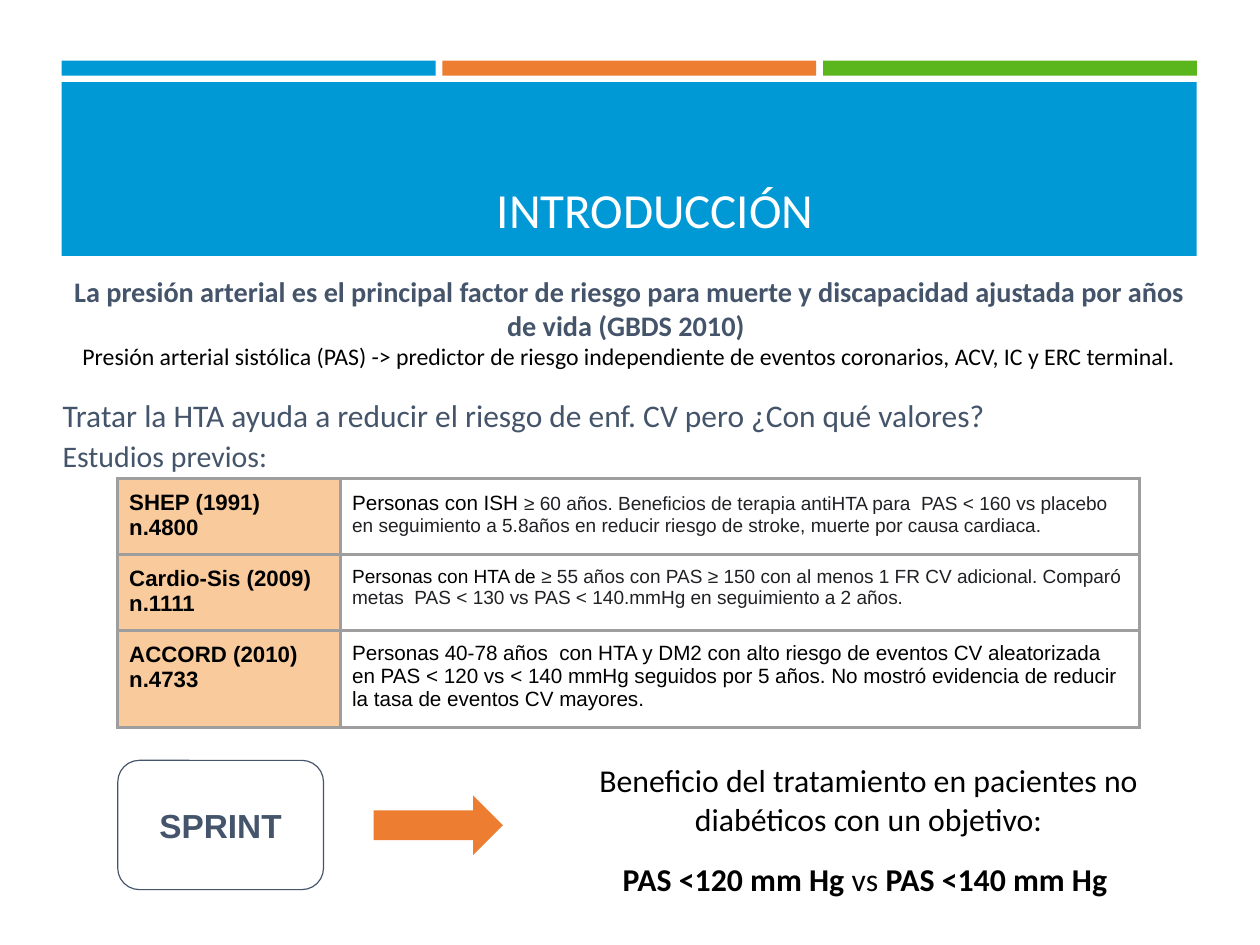
from lxml import etree
from pptx import Presentation
from pptx.dml.color import RGBColor
from pptx.enum.shapes import MSO_SHAPE
from pptx.enum.text import MSO_ANCHOR, MSO_AUTO_SIZE, PP_ALIGN
from pptx.oxml.ns import qn
from pptx.util import Pt

RECTANGLE = MSO_SHAPE.RECTANGLE
ROUNDED = MSO_SHAPE.ROUNDED_RECTANGLE
ARROW = MSO_SHAPE.RIGHT_ARROW
TOP, MIDDLE, BOTTOM = MSO_ANCHOR.TOP, MSO_ANCHOR.MIDDLE, MSO_ANCHOR.BOTTOM
LEFT, CENTER = PP_ALIGN.LEFT, PP_ALIGN.CENTER
NO_AUTOFIT = MSO_AUTO_SIZE.NONE

BLUE = RGBColor(0x00, 0x99, 0xD5)
ORANGE = RGBColor(0xED, 0x7D, 0x31)
GREEN = RGBColor(0x5B, 0xB5, 0x1C)
SLATE = RGBColor(0x44, 0x54, 0x6A)
PEACH = RGBColor(0xF9, 0xCB, 0x9C)
GRAY = RGBColor(0x9E, 0x9E, 0x9E)
INK = RGBColor(0x20, 0x21, 0x24)
BLACK = RGBColor(0, 0, 0)
WHITE = RGBColor(255, 255, 255)

TITLE = "INTRODUCCIÓN"
BODY = [
    ("La presión arterial es el principal factor de riesgo para muerte y discapacidad "
     "ajustada por años de vida (GBDS 2010) ", 17.8, SLATE, True, CENTER, 0),
    ("Presión arterial sistólica (PAS) -> predictor de riesgo independiente de eventos "
     "coronarios, ACV, IC y ERC terminal.", 15, BLACK, False, CENTER, 0),
    ("Tratar la HTA ayuda a reducir el riesgo de enf. CV pero ¿Con qué valores?",
     19.8, SLATE, False, LEFT, 16.2),
    ("Estudios previos:", 18.8, SLATE, False, LEFT, 2.4),
]
STUDIES = [
    (("SHEP (1991)", "n.4800"), 47.9, [
        ("Personas con ISH", 13, BLACK),
        (" ", 14, BLACK),
        ("≥ 60 años. Beneficios de terapia antiHTA para  PAS < 160 vs placebo en seguimiento "
         "a 5.8años en reducir riesgo de stroke, muerte por causa cardiaca.", 12, INK)]),
    (("Cardio-Sis (2009)", "n.1111"), 47.9, [
        ("Personas con HTA de ", 12, BLACK),
        ("≥ 55 años con PAS ≥ 150 con al menos 1 FR CV adicional. Comparó metas  PAS < 130 "
         "vs PAS < 140.mmHg en seguimiento a 2 años.", 12, INK)]),
    (("ACCORD (2010)", "n.4733"), 61.1, [
        ("Personas 40-78 años  con HTA y DM2 con alto riesgo de eventos CV aleatorizada en "
         "PAS < 120 vs < 140 mmHg seguidos por 5 años. No mostró evidencia de reducir la "
         "tasa de eventos CV mayores.", 13, BLACK)]),
]
COLUMN_WIDTHS = (140.4, 503)
TRIAL = "SPRINT"
GOAL = "Beneficio del tratamiento en pacientes no diabéticos con un objetivo:"
TARGETS = [("PAS <120 mm Hg", True), (" vs ", False), ("PAS <140 mm Hg ", True)]

SLIDE_WIDTH, SLIDE_HEIGHT = 793.7, 595.28
BAND_LEFT, BAND_WIDTH, BAR_GAP = 38.9, 715, 4.3
TABLE_LEFT, TABLE_TOP = 74.2, 301.5


def place(shape, left, top, width, height):
    shape.left, shape.top = Pt(left), Pt(top)
    shape.width, shape.height = Pt(width), Pt(height)


def set_font(font, size, color, name="Calibri", bold=False):
    font.name, font.size, font.bold = name, Pt(size), bold
    font.color.rgb = color


def add_block(kind, box, fill, line=None):
    shape = slide.shapes.add_shape(kind, *map(Pt, box))
    shape.shadow.inherit = False
    shape.fill.solid()
    shape.fill.fore_color.rgb = fill
    if line is None:
        shape.line.fill.background()
    else:
        shape.line.color.rgb = line
        shape.line.width = Pt(0.75)
    return shape


def set_margins(owner, size=7.2):
    owner.margin_left = owner.margin_right = Pt(size)
    owner.margin_top = owner.margin_bottom = Pt(size)


def set_borders(cell):
    properties = cell._tc.get_or_add_tcPr()
    for index, side in enumerate(("a:lnL", "a:lnR", "a:lnT", "a:lnB")):
        line = etree.Element(qn(side), w=str(Pt(2.25)))
        fill = etree.SubElement(line, qn("a:solidFill"))
        etree.SubElement(fill, qn("a:srgbClr"), val=str(GRAY))
        properties.insert(index, line)


presentation = Presentation()
presentation.slide_width, presentation.slide_height = Pt(SLIDE_WIDTH), Pt(SLIDE_HEIGHT)
slide = presentation.slides.add_slide(presentation.slide_layouts[1])
title, body = slide.placeholders

bar_width = (BAND_WIDTH - 2 * BAR_GAP) / 3
bands = [add_block(RECTANGLE, (BAND_LEFT + i * (bar_width + BAR_GAP), 38.2, bar_width, 9.4), color)
         for i, color in enumerate((BLUE, ORANGE, GREEN))]
bands.append(add_block(RECTANGLE, (BAND_LEFT, 51.8, BAND_WIDTH, 109.4), BLUE))
for band in reversed(bands):
    slide.shapes._spTree.insert(2, band._element)

place(title, 81.4, 59.4, 662.4, 94.3)
title.text_frame.text = TITLE
title.text_frame.vertical_anchor = BOTTOM
title.text_frame.auto_size = NO_AUTOFIT
set_font(title.text_frame.paragraphs[0].font, 30.9, WHITE)
title.text_frame.paragraphs[0].alignment = CENTER

place(body, 32.2, 169, 727.9, 130)
frame = body.text_frame
frame.auto_size = NO_AUTOFIT
frame.vertical_anchor = TOP
frame.text = "\n".join(row[0] for row in BODY)
for paragraph, (_, size, color, bold, alignment, space) in zip(frame.paragraphs, BODY):
    set_font(paragraph.font, size, color, bold=bold)
    paragraph.alignment = alignment
    paragraph.space_before = Pt(space)
    properties = paragraph._p.get_or_add_pPr()
    properties.set("marL", "0")
    properties.set("indent", "0")
    properties.insert_element_before(etree.Element(qn("a:buNone")), "a:tabLst", "a:defRPr", "a:extLst")

table = slide.shapes.add_table(
    len(STUDIES), 2, Pt(TABLE_LEFT), Pt(TABLE_TOP),
    Pt(sum(COLUMN_WIDTHS)), Pt(sum(study[1] for study in STUDIES))).table
table.first_row = table.horz_banding = False
for column, width in zip(table.columns, COLUMN_WIDTHS):
    column.width = Pt(width)
for row, (name_lines, height, details) in zip(table.rows, STUDIES):
    row.height = Pt(height)
    name_cell, detail_cell = row.cells
    for cell, fill in ((name_cell, PEACH), (detail_cell, WHITE)):
        set_margins(cell)
        cell.fill.solid()
        cell.fill.fore_color.rgb = fill
        set_borders(cell)
    name_cell.text = "\n".join(name_lines)
    for paragraph in name_cell.text_frame.paragraphs:
        set_font(paragraph.font, 14, BLACK, "Arial", True)
    for text, size, color in details:
        run = detail_cell.text_frame.paragraphs[0].add_run()
        run.text = text
        set_font(run.font, size, color, "Arial")

trial = add_block(ROUNDED, (TABLE_LEFT, 479, 129.6, 81.4), WHITE, SLATE)
set_margins(trial.text_frame)
trial.text_frame.text = TRIAL
trial.text_frame.vertical_anchor = MIDDLE
trial.text_frame.paragraphs[0].alignment = CENTER
set_font(trial.text_frame.paragraphs[0].font, 21, SLATE, "Arial", True)
add_block(ARROW, (235.4, 501.1, 81.4, 37.4), ORANGE)

goal = slide.shapes.add_textbox(Pt(349.2), Pt(472.3), Pt(396), Pt(118.8)).text_frame
goal.word_wrap = True
set_margins(goal)
goal.text = GOAL
targets = goal.add_paragraph()
targets.space_before = Pt(14.2)
for paragraph in goal.paragraphs:
    paragraph.alignment = CENTER
    set_font(paragraph.font, 20, BLACK)
for text, bold in TARGETS:
    run = targets.add_run()
    run.text = text
    run.font.bold = bold

presentation.save("out.pptx")
